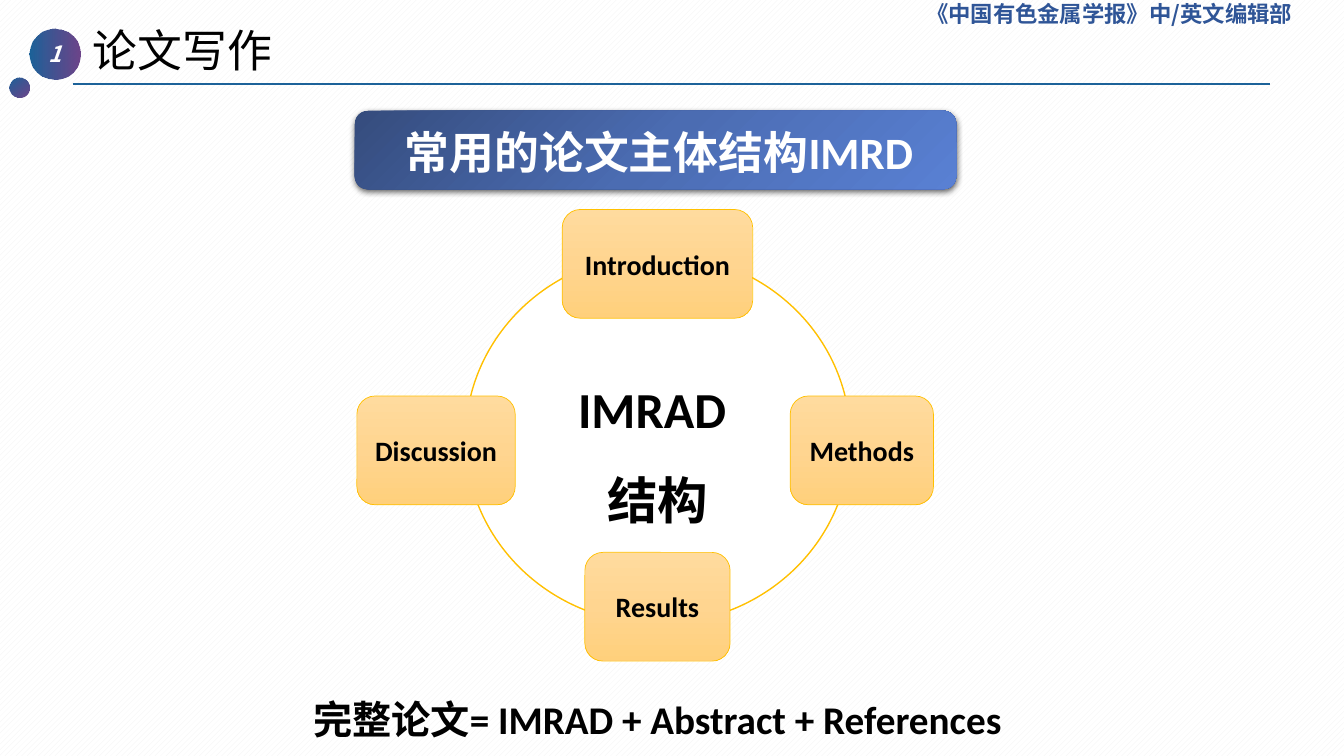
from lxml import etree
from pptx import Presentation
from pptx.dml.color import RGBColor
from pptx.enum.dml import MSO_PATTERN
from pptx.enum.shapes import MSO_CONNECTOR, MSO_SHAPE
from pptx.enum.text import MSO_ANCHOR as Anchor, PP_ALIGN as Align
from pptx.oxml.ns import qn
from pptx.util import Cm, Pt

LATIN, CHINESE = "Calibri", "Noto Sans CJK SC"
SECTION = "论文写作"
JOURNAL = "《中国有色金属学报》中/英文编辑部"
BANNER = "常用的论文主体结构IMRD"
CENTER = "IMRAD \n结构"
FORMULA = "完整论文= IMRAD + Abstract + References"

# Stops: position %, colour, opacity %
BADGE_STOPS = [(0, "1C6299", 100), (100, "5C307D", 90)]
STEP_STOPS = [(0, "FFDB9E", 100), (50, "FFD590", 100), (100, "FFD07C", 100)]
BANNER_STOPS = [(0, "354C7D", 100), (50, "4B6CB2", 100), (100, "5980D3", 100)]

# Text, centre x, centre y, width in cm
STEPS = [
    ("Introduction", 16.57, 6.65, 4.8),
    ("Methods", 21.72, 11.35, 3.61),
    ("Results", 16.57, 15.29, 3.66),
    ("Discussion", 10.99, 11.35, 3.99),
]
STEP_HEIGHT = 2.74


def rgb(value):
    return RGBColor.from_string(value)


def add_xml(parent, tag, **attributes):
    return etree.SubElement(parent, qn(tag), attributes)


def set_gradient(shape, stops, angle):
    """Fill with a linear gradient; the angle runs clockwise in degrees."""
    shape.fill.gradient()
    gradient = shape._element.spPr.find(qn("a:gradFill"))
    for child in list(gradient):
        gradient.remove(child)
    stop_list = add_xml(gradient, "a:gsLst")
    for position, value, opacity in stops:
        stop = add_xml(stop_list, "a:gs", pos=str(position * 1000))
        color = add_xml(stop, "a:srgbClr", val=value)
        if opacity < 100:
            add_xml(color, "a:alpha", val=str(opacity * 1000))
    add_xml(gradient, "a:lin", ang=str(angle * 60000), scaled="0")


def add_shadow(shape):
    effects = shape._element.spPr.find(qn("a:effectLst"))
    shadow = add_xml(effects, "a:outerShdw", blurRad=str(Pt(4.5)),
                     dist=str(Pt(1.5)), dir="5400000", rotWithShape="0")
    color = add_xml(shadow, "a:srgbClr", val="000000")
    add_xml(color, "a:alpha", val="63000")


def write(shape, text, size, color="000000", font=LATIN, bold=True, italic=False,
          align=Align.CENTER, anchor=Anchor.MIDDLE, spacing=1.0, left=0, top=0):
    frame = shape.text_frame
    frame.text = text
    frame.word_wrap = True
    frame.vertical_anchor = anchor
    frame.margin_left, frame.margin_top = Cm(left), Cm(top)
    frame.margin_right = frame.margin_bottom = 0
    for paragraph in frame.paragraphs:
        paragraph.alignment = align
        paragraph.line_spacing = spacing
        for run in paragraph.runs:
            run.font.name, run.font.size = font, Pt(size)
            run.font.bold, run.font.italic = bold, italic
            run.font.color.rgb = rgb(color)
            add_xml(run.font._element, "a:ea", typeface=CHINESE)


def add_shape(slide, kind, left, top, width, height, line=None, line_width=1):
    shape = slide.shapes.add_shape(kind, Cm(left), Cm(top), Cm(width), Cm(height))
    shape.shadow.inherit = False
    if line:
        shape.line.color.rgb = rgb(line)
        shape.line.width = Pt(line_width)
    else:
        shape.line.fill.background()
    return shape


def add_text(slide, left, top, width, height, text, size, **style):
    box = slide.shapes.add_textbox(Cm(left), Cm(top), Cm(width), Cm(height))
    write(box, text, size, anchor=Anchor.TOP, **style)


def add_header(slide):
    add_text(slide, 2.34, 0.58, 11.05, 1.4, SECTION, 32,
             font=CHINESE, bold=False, align=Align.LEFT)
    rule = slide.shapes.add_connector(
        MSO_CONNECTOR.STRAIGHT, Cm(1.83), Cm(2.11), Cm(32), Cm(2.11))
    rule.line.color.rgb = rgb("1C6299")
    rule.line.width = Pt(1.75)
    add_xml(rule._element.spPr, "a:effectLst")

    badge = add_shape(slide, MSO_SHAPE.OVAL, 0.74, 0.71, 1.3, 1.3)
    set_gradient(badge, BADGE_STOPS, 0)
    write(badge, "1", 16, "FFFFFF", font=CHINESE, italic=True)
    dot = add_shape(slide, MSO_SHAPE.OVAL, 0.25, 1.96, 0.5, 0.5)
    set_gradient(dot, BADGE_STOPS, 50)
    add_text(slide, 23.34, 0, 10.4, 0.9, JOURNAL, 16,
             color="2F5597", font=CHINESE, align=Align.LEFT)


def add_cycle(slide):
    ring = add_shape(slide, MSO_SHAPE.OVAL, 11.73, 6.4, 9.7, 9.32, "FFC000", 1)
    ring.fill.solid()
    ring.fill.fore_color.rgb = rgb("FFFFFF")
    write(ring, CENTER, 36, spacing=1.5)
    for text, x, y, width in STEPS:
        step = add_shape(slide, MSO_SHAPE.ROUNDED_RECTANGLE, x - width / 2,
                         y - STEP_HEIGHT / 2, width, STEP_HEIGHT, "FFC000", 0.5)
        set_gradient(step, STEP_STOPS, 90)
        write(step, text, 20)


def main():
    presentation = Presentation()
    presentation.slide_width, presentation.slide_height = Cm(33.87), Cm(19.05)
    slide = presentation.slides.add_slide(presentation.slide_layouts[6])
    background = slide.background.fill
    background.patterned()
    background.pattern = MSO_PATTERN.WIDE_UPWARD_DIAGONAL
    background.fore_color.rgb = rgb("F2F2F2")
    background.back_color.rgb = rgb("FFFFFF")

    add_header(slide)
    add_cycle(slide)
    banner = add_shape(slide, MSO_SHAPE.ROUNDED_RECTANGLE, 8.94, 2.79, 15.16, 1.98)
    set_gradient(banner, BANNER_STOPS, 45)
    add_shadow(banner)
    write(banner, BANNER, 32, "FFFFFF", spacing=0.9, left=0.18, top=0.25)
    add_text(slide, 7.37, 17.65, 18.39, 1.3, FORMULA, 28, spacing=0.9)
    presentation.save("out.pptx")


if __name__ == "__main__":
    main()
